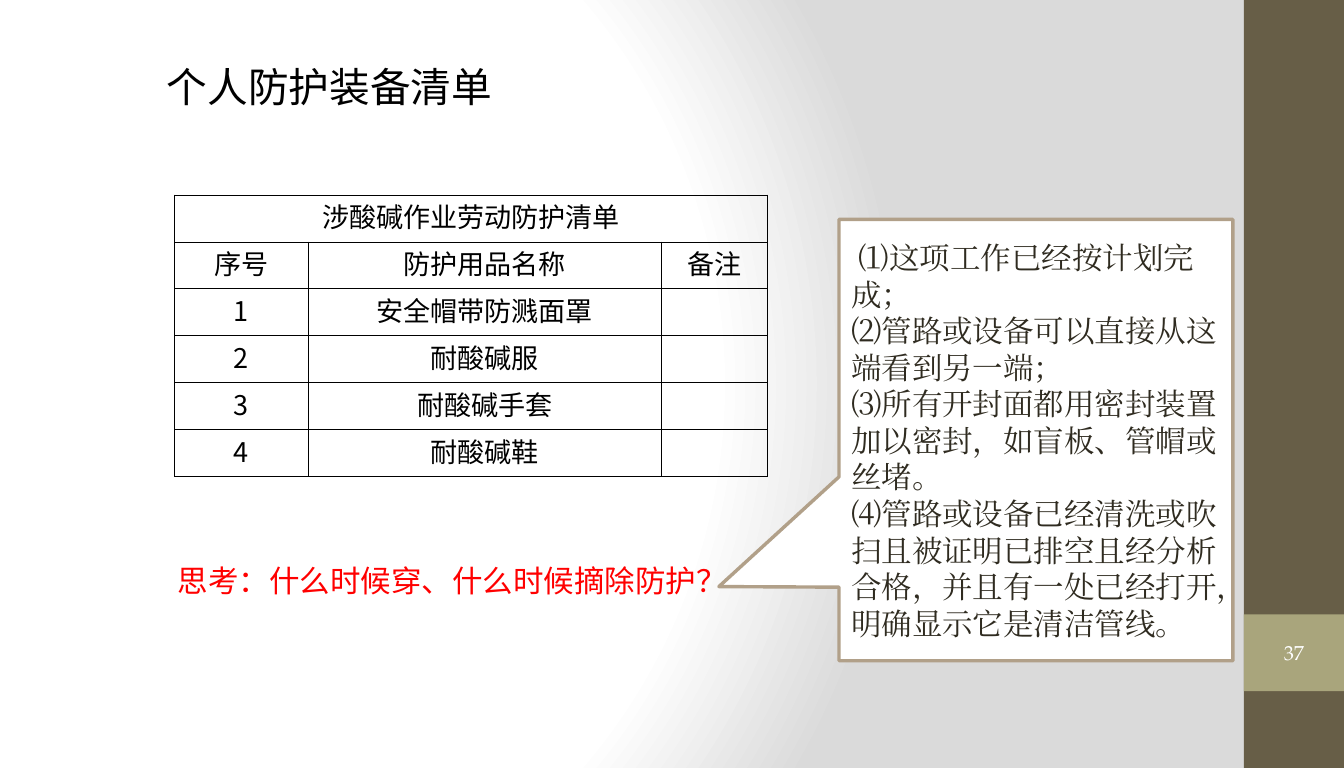
from pptx import Presentation
from pptx.dml.color import RGBColor
from pptx.enum.shapes import MSO_SHAPE
from pptx.enum.text import MSO_ANCHOR, PP_ALIGN
from pptx.oxml import parse_xml
from pptx.oxml.ns import nsdecls
from pptx.util import Inches, Pt

TITLE = "个人防护装备清单"
QUESTION = "思考：什么时候穿、什么时候摘除防护？"
GEAR_CAPTION = "涉酸碱作业劳动防护清单"
GEAR_HEADER = ["序号", "防护用品名称", "备注"]
GEAR = ["安全帽带防溅面罩", "耐酸碱服", "耐酸碱手套", "耐酸碱鞋"]
REMOVAL_CONDITIONS = [
    " ⑴这项工作已经按计划完成；",
    "⑵管路或设备可以直接从这端看到另一端；",
    "⑶所有开封面都用密封装置加以密封，如盲板、管帽或丝堵。",
    "⑷管路或设备已经清洗或吹扫且被证明已排空且经分析合格，并且有一处已经打开，明确显示它是清洁管线。",
]
PAGE_NUMBER = "37"

SANS, SERIF = "Noto Sans CJK SC", "TeX Gyre Pagella"
WIDTH, HEIGHT = 11.02, 6.3
BAND_LEFT = 10.2
BAND_WIDTH = WIDTH - BAND_LEFT
GEAR_COLUMNS = [1.1, 2.89, 0.87]
GEAR_LEFT, GEAR_TOP, GEAR_HEIGHT = 1.43, 1.6, 2.31
GLOW = [(0, "FFFFFF"), (75, "FFFFFF"), (100, "DADADA")]
CELL_FORMAT = {
    "vertical_anchor": MSO_ANCHOR.MIDDLE,
    "margin_left": Inches(0.01),
    "margin_right": Inches(0.01),
    "margin_top": Inches(0.01),
    "margin_bottom": Inches(0.05),
}


def color(value):
    return RGBColor.from_string(value)


def box(left, top, width, height):
    return [Inches(v) for v in (left, top, width, height)]


def apply(target, values):
    for name, value in values.items():
        setattr(target, name, value)


def write(frame, lines, size, face, ink, align=PP_ALIGN.LEFT):
    for index, line in enumerate(lines):
        paragraph = frame.add_paragraph() if index else frame.paragraphs[0]
        paragraph.alignment = align
        if not line:
            paragraph._p.get_or_add_endParaRPr().set("sz", str(size * 100))
            continue
        run = paragraph.add_run()
        run.text = line
        apply(run.font, {"size": Pt(size), "name": face})
        run.font.color.rgb = color(ink)
        run.font._element.find("{*}latin").addnext(
            parse_xml(f'<a:ea {nsdecls("a")} typeface="{face}"/>'))


def add_block(slide, preset, place, fill, line=None):
    block = slide.shapes.add_shape(preset, *box(*place))
    block.shadow.inherit = False
    block.fill.solid()
    block.fill.fore_color.rgb = color(fill)
    if line:
        block.line.color.rgb = color(line)
        block.line.width = Pt(2)
    else:
        block.line.fill.background()
    apply(block.text_frame, {"word_wrap": True, "vertical_anchor": MSO_ANCHOR.MIDDLE})
    return block


def add_label(slide, place, text, size, ink, wrap):
    label = slide.shapes.add_textbox(*box(*place))
    label.text_frame.word_wrap = wrap
    write(label.text_frame, [text], size, SANS, ink)


def paint_background(slide):
    stops = "".join(f'<a:gs pos="{share * 1000}"><a:srgbClr val="{tone}"/></a:gs>'
                    for share, tone in GLOW)
    slide.element.cSld.insert(0, parse_xml(
        f'<p:bg {nsdecls("p", "a")}><p:bgPr><a:gradFill><a:gsLst>{stops}</a:gsLst>'
        '<a:path path="circle"><a:fillToRect l="20000" t="50000" r="100000" b="50000"/>'
        '</a:path></a:gradFill><a:effectLst/></p:bgPr></p:bg>'))


def add_gear_table(slide):
    rows = [[GEAR_CAPTION, "", ""], GEAR_HEADER]
    rows += [[str(number), name, ""] for number, name in enumerate(GEAR, 1)]
    table = slide.shapes.add_table(
        len(rows), len(GEAR_COLUMNS),
        *box(GEAR_LEFT, GEAR_TOP, sum(GEAR_COLUMNS), GEAR_HEIGHT)).table
    apply(table, {"first_row": False, "horz_banding": False})
    for column, width in zip(table.columns, GEAR_COLUMNS):
        column.width = Inches(width)
    for r, row in enumerate(rows):
        table.rows[r].height = Inches(GEAR_HEIGHT / len(rows))
        for c, text in enumerate(row):
            cell = table.cell(r, c)
            apply(cell, CELL_FORMAT)
            write(cell.text_frame, [text], 16, SANS, "000000", PP_ALIGN.CENTER)
            cell.fill.background()
            for index, side in enumerate(("lnL", "lnR", "lnT", "lnB")):
                cell._tc.tcPr.insert(index, parse_xml(
                    f'<a:{side} {nsdecls("a")} w="{Pt(0.5)}"><a:solidFill>'
                    f'<a:srgbClr val="000000"/></a:solidFill></a:{side}>'))
    table.cell(0, 0).merge(table.cell(0, len(GEAR_COLUMNS) - 1))


def main():
    deck = Presentation()
    apply(deck, {"slide_width": Inches(WIDTH), "slide_height": Inches(HEIGHT)})
    slide = deck.slides.add_slide(deck.slide_layouts[6])
    paint_background(slide)

    add_block(slide, MSO_SHAPE.RECTANGLE, (BAND_LEFT, 0, BAND_WIDTH, HEIGHT), "675E47")
    page_tab = add_block(slide, MSO_SHAPE.RECTANGLE,
                         (BAND_LEFT, HEIGHT * 0.8, BAND_WIDTH, HEIGHT * 0.1), "A9A57C")
    write(page_tab.text_frame, [PAGE_NUMBER], 12, SERIF, "FFFFFF", PP_ALIGN.CENTER)

    add_gear_table(slide)
    add_label(slide, (1.27, 0.46, 2.87, 0.5), TITLE, 24, "000000", False)
    add_label(slide, (1.36, 4.56, 8.31, 0.4), QUESTION, 18, "FF0000", True)

    conditions = add_block(slide, MSO_SHAPE.RECTANGULAR_CALLOUT,
                           (6.88, 1.8, 3.23, 3.62), "FFFFFF", "B1A089")
    conditions.adjustments[0] = -0.805
    conditions.adjustments[1] = 0.332
    write(conditions.text_frame, REMOVAL_CONDITIONS, 18, SERIF, "2F2B20")

    deck.save("out.pptx")


if __name__ == "__main__":
    main()
